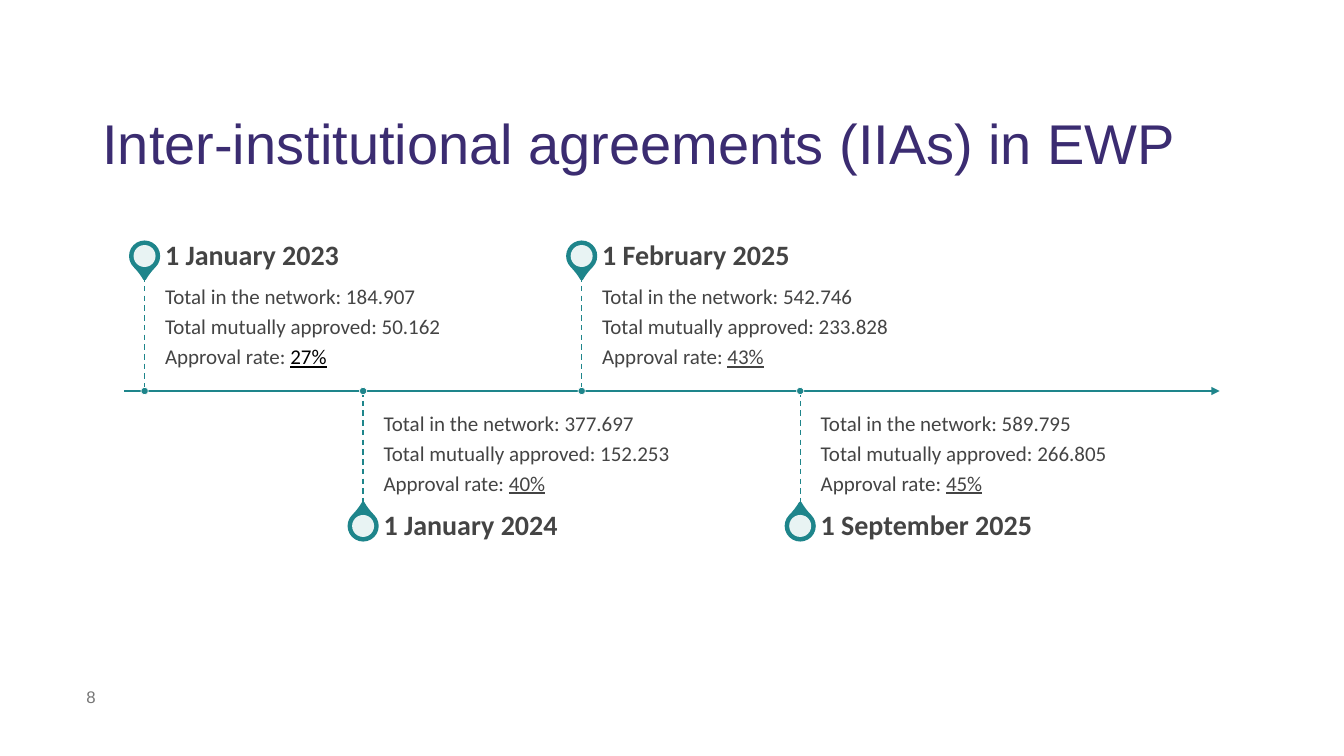
from lxml.etree import SubElement
from pptx import Presentation
from pptx.dml.color import RGBColor
from pptx.enum.dml import MSO_LINE
from pptx.enum.shapes import MSO_CONNECTOR, MSO_SHAPE
from pptx.enum.text import MSO_ANCHOR, PP_ALIGN
from pptx.oxml.ns import qn
from pptx.util import Pt

TEAL, GREY, WHITE = "1E858B", "444444", "FFFFFF"


def color(value):
    return RGBColor.from_string(value)


def write(box, area, paragraphs, font, size, insets, anchor, after=0, spacing=0.9):
    """Place a box and fill it; each run is (text, colour, bold, underline)."""
    box.left, box.top, box.width, box.height = [Pt(v) for v in area]
    frame = box.text_frame
    frame.word_wrap = True
    frame.vertical_anchor = anchor
    (frame.margin_left, frame.margin_top,
     frame.margin_right, frame.margin_bottom) = [Pt(v) for v in insets]
    for index, runs in enumerate(paragraphs):
        para = frame.add_paragraph() if index else frame.paragraphs[0]
        para.alignment = PP_ALIGN.LEFT
        para.line_spacing = spacing
        para.space_after = Pt(after)
        for text, ink, bold, underline in runs:
            span = para.add_run()
            span.text = text
            span.font.name, span.font.size = font, Pt(size)
            span.font.bold, span.font.underline = bold, underline
            span.font.color.rgb = color(ink)


deck = Presentation()
deck.slide_width, deck.slide_height = Pt(960), Pt(540)
page = deck.slides.add_slide(deck.slide_layouts[5])
shapes = page.shapes

# Title and page number
write(shapes.title, (66, 64, 828, 62),
      [[("Inter-institutional agreements (IIAs) in EWP", "3B2C71", False, False)]],
      "Arial", 40, (7.2, 3.6, 7.2, 0), MSO_ANCHOR.BOTTOM)
write(shapes.add_textbox(0, 0, 0, 0), (54.7, 483, 216, 29),
      [[("8", "767676", False, False)]],
      "Arial", 12, (7.2, 3.6, 7.2, 3.6), MSO_ANCHOR.MIDDLE, spacing=1)

# Timeline axis
AXIS_Y = 279.3
axis = shapes.add_connector(MSO_CONNECTOR.STRAIGHT, Pt(88.6), Pt(AXIS_Y), Pt(871.2), Pt(AXIS_Y))
axis.line.color.rgb = color(TEAL)
axis.line.width = Pt(1.5)
SubElement(axis.line._get_or_add_ln(), qn("a:tailEnd"), type="triangle")
SubElement(axis._element.spPr, qn("a:effectLst"))

# Milestones alternate above and below the axis
FIRST_X, STEP = 103.3, 156.1
STEM, HEAD, TEXT_WIDTH, TEXT_GAP = 82, 28.8, 260, 14.6
milestones = [
    ("1 January 2023", "184.907", "50.162", "27%", "000000"),
    ("1 January 2024", "377.697", "152.253", "40%", GREY),
    ("1 February 2025", "542.746", "233.828", "43%", GREY),
    ("1 September 2025", "589.795", "266.805", "45%", GREY),
]
for index, (date, total, approved, rate, rate_ink) in enumerate(milestones):
    x = FIRST_X + index * STEP
    above = index % 2 == 0
    side = -1 if above else 1
    pin_y = AXIS_Y + side * (STEM + HEAD / 2)
    text_x = x + TEXT_GAP

    # Pin, its pale centre and the dot on the axis
    marks = []
    for kind, size, y, fill in [(MSO_SHAPE.TEAR, 20.2, pin_y, TEAL),
                                (MSO_SHAPE.OVAL, 15.7, pin_y, WHITE),
                                (MSO_SHAPE.OVAL, 5.2, AXIS_Y, TEAL)]:
        mark = shapes.add_shape(kind, Pt(x - size / 2), Pt(y - size / 2), Pt(size), Pt(size))
        mark.shadow.inherit = False
        mark.fill.solid()
        mark.fill.fore_color.rgb = color(fill)
        marks.append(mark)
    pin, centre, dot = marks
    pin.adjustments[0] = 1.15
    pin.rotation = 135 if above else 315
    pin.line.color.rgb = color(TEAL)
    pin.line.width = Pt(2)
    centre.line.fill.background()
    tint = centre.fill._xPr.find(qn("a:solidFill"))[0]
    SubElement(tint, qn("a:alpha"), val="90000")
    dot.line.color.rgb = color(WHITE)
    dot.line.width = Pt(0.5)

    # Figures and date
    figures = [
        [(f"Total in the network: {total}", GREY, False, False)],
        [(f"Total mutually approved: {approved}", GREY, False, False)],
        [("Approval rate: ", GREY, False, False), (rate, rate_ink, False, True)],
    ]
    write(shapes.add_textbox(0, 0, 0, 0),
          (text_x, AXIS_Y - STEM if above else AXIS_Y, TEXT_WIDTH, STEM),
          figures, "Calibri", 15,
          (0, 7.2, 7.2, 11.5) if above else (0, 11.5, 0, 7.2),
          MSO_ANCHOR.TOP if above else MSO_ANCHOR.BOTTOM, after=5.25)
    write(shapes.add_textbox(0, 0, 0, 0),
          (text_x, pin_y - HEAD / 2, TEXT_WIDTH, HEAD),
          [[(date, GREY, True, False)]], "Calibri", 20,
          (0, 0, 10, 0), MSO_ANCHOR.MIDDLE, after=7)

    # Dashed stem, with the dot kept on top of it
    ends = sorted([AXIS_Y, AXIS_Y + side * STEM])
    stem = shapes.add_connector(MSO_CONNECTOR.STRAIGHT, Pt(x), Pt(ends[0]), Pt(x), Pt(ends[1]))
    stem.line.color.rgb = color(TEAL)
    stem.line.width = Pt(1)
    stem.line.dash_style = MSO_LINE.DASH
    SubElement(stem._element.spPr, qn("a:effectLst"))
    stem._element.addnext(dot._element)

deck.save("out.pptx")
